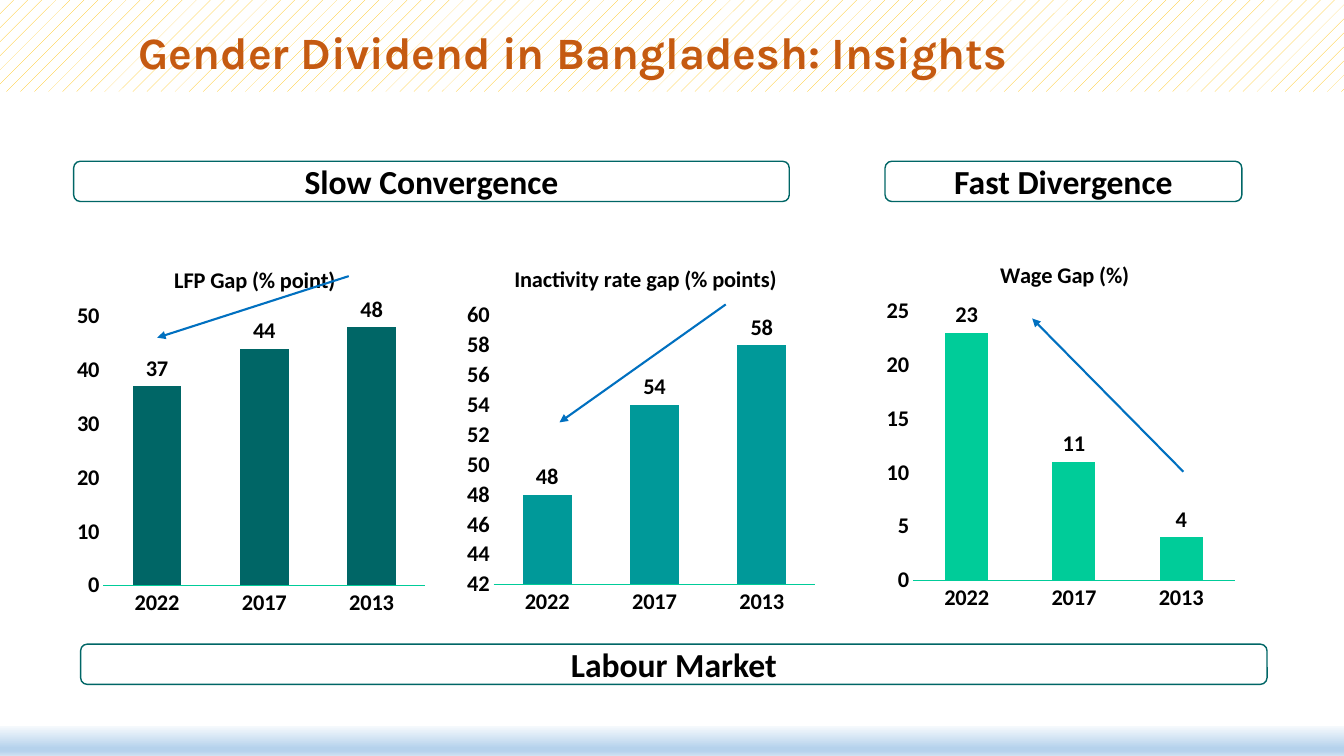
"""Build the slide on the gender dividend in Bangladesh with three gap charts."""
from pptx import Presentation
from pptx.chart.data import CategoryChartData
from pptx.dml.color import RGBColor
from pptx.enum.chart import XL_CHART_TYPE as ChartType, XL_LABEL_POSITION as LabelPosition
from pptx.enum.chart import XL_TICK_MARK as TickMark
from pptx.enum.dml import MSO_PATTERN_TYPE as Pattern
from pptx.enum.shapes import MSO_CONNECTOR as Connector, MSO_SHAPE as Shape
from pptx.enum.text import MSO_ANCHOR as Anchor, PP_ALIGN as Align
from pptx.oxml import parse_xml
from pptx.oxml.ns import nsdecls
from pptx.util import Inches, Pt

deck = Presentation()
deck.slide_width, deck.slide_height = Inches(13.33), Inches(7.5)
page = deck.slides.add_slide(deck.slide_layouts[5])


def share(*percents):
    """Turn alternating percentages of slide width and height into lengths."""
    sides = (deck.slide_width, deck.slide_height)
    return [round(sides[i % 2] * value / 100) for i, value in enumerate(percents)]


def style(font, size, color, name="Calibri"):
    """Set a bold font."""
    font.size, font.name, font.bold = Pt(size), name, True
    font.color.rgb = RGBColor.from_string(color)


top_band = page.shapes.add_shape(Shape.RECTANGLE, *share(0, 0, 100, 12.13))
top_band.fill.patterned()
top_band.fill.pattern = Pattern.PERCENT_5
top_band.fill.fore_color.rgb = RGBColor.from_string("FFC000")
top_band.fill.back_color.rgb = RGBColor.from_string("FFFFFF")

bottom_band = page.shapes.add_shape(Shape.RECTANGLE, *share(0, 96, 100, 4))
bottom_band.fill.gradient()
bottom_band.fill.gradient_angle = 270
stops = bottom_band.element.spPr.find(".//{*}gsLst")
for stop in list(stops):
    stops.remove(stop)
for percent, color in ((0, "F7FAFD"), (74, "B5D2EC"), (83, "B5D2EC"), (100, "CEE1F2")):
    stops.append(parse_xml(
        f'<a:gs {nsdecls("a")} pos="{percent * 1000}"><a:srgbClr val="{color}"/></a:gs>'))
for band in (top_band, bottom_band):
    band.line.fill.background()
    band.shadow.inherit = False

title = page.shapes.title
bottom_band.element.addnext(title.element)
title.left, title.top, title.width, title.height = share(0.98, 1.07, 83.35, 12.4)
title.text_frame.vertical_anchor = Anchor.MIDDLE
para = title.text_frame.paragraphs[0]
para.alignment, para.line_spacing = Align.CENTER, 0.9
span = para.add_run()
span.text = "Gender Dividend in Bangladesh: Insights"
style(span.font, 32, "C55A11", "Karla")

gaps = [
    ("LFP Gap (% point)", (37, 44, 48), "006666", 119, 5.18, 32, 0.277, (0, 50, 10)),
    ("Wage Gap (%)", (23, 11, 4), "00CC99", 149, 65.42, 31.33, 0.322, (0, 25, 5)),
    ("Inactivity rate gap (% points)", (48, 54, 58), "009999", 119, 34.21, 31.87, 0.139,
     (42, 60, 2)),
]
for name, values, color, gap_width, left, top, title_left, (low, high, step) in gaps:
    data = CategoryChartData(number_format="0")
    data.categories = ["2022", "2017", "2013"]
    data.add_series(name, values)
    chart = page.shapes.add_chart(
        ChartType.COLUMN_CLUSTERED, *share(left, top, 27, 50.67), data).chart
    chart.has_legend = False
    style(chart.font, 16, "000000")
    chart.has_title = True
    span = chart.chart_title.text_frame.paragraphs[0].add_run()
    span.text = name
    style(span.font, 16, "000000")
    chart.chart_title.include_in_layout = False

    years, scale = chart.category_axis, chart.value_axis
    scale.minimum_scale, scale.maximum_scale, scale.major_unit = low, high, step
    scale.has_major_gridlines = False
    scale.tick_labels.number_format = "0"
    scale.tick_labels.number_format_is_linked = False
    for axis in (years, scale):
        axis.major_tick_mark = axis.minor_tick_mark = TickMark.NONE
        style(axis.tick_labels.font, 16, "000000")
    scale.format.line.fill.background()
    years.format.line.color.rgb = RGBColor.from_string("00CC99")
    years.format.line.width = Pt(0.75)

    plot = chart.plots[0]
    plot.gap_width, plot.overlap, plot.vary_by_categories = gap_width, -27, False
    bars = plot.series[0]
    bars.format.fill.solid()
    bars.format.fill.fore_color.rgb = RGBColor.from_string(color)
    labels = bars.data_labels
    labels.show_value = True
    labels.position = LabelPosition.OUTSIDE_END
    labels.number_format, labels.number_format_is_linked = "0", False
    style(labels.font, 16, "000000")

    layouts = [
        ("title", 1, '<c:xMode val="edge"/><c:yMode val="edge"/>'
                     f'<c:x val="{title_left}"/><c:y val="0.05"/>'),
        ("plotArea", 0, '<c:layoutTarget val="inner"/><c:xMode val="edge"/>'
                        '<c:yMode val="edge"/><c:x val="0.093"/><c:y val="0.195"/>'
                        '<c:w val="0.887"/><c:h val="0.702"/>'),
    ]
    for part, index, rules in layouts:
        owner = chart.element.find(".//{*}chart/{*}" + part)
        for old in owner.findall("{*}layout"):
            owner.remove(old)
        owner.insert(index, parse_xml(
            f'<c:layout {nsdecls("c")}><c:manualLayout>{rules}</c:manualLayout></c:layout>'))

headings = [
    ("Slow Convergence", (5.48, 21.33, 53.25, 5.33)),
    ("Fast Divergence", (65.85, 21.33, 26.55, 5.33)),
    ("Labour Market", (6, 85.2, 88.28, 5.33)),
]
for text, area in headings:
    box = page.shapes.add_shape(Shape.ROUNDED_RECTANGLE, *share(*area))
    box.shadow.inherit = False
    box.fill.background()
    box.line.color.rgb = RGBColor.from_string("006666")
    box.line.width = Pt(1)
    box.text_frame.vertical_anchor = Anchor.MIDDLE
    para = box.text_frame.paragraphs[0]
    para.alignment = Align.CENTER
    span = para.add_run()
    span.text = text
    style(span.font, 24, "000000")

trends = [(25.95, 36.53, 11.7, 44.67), (54, 40.27, 41.63, 55.87), (88.05, 62.4, 76.8, 42.13)]
for ends in trends:
    arrow = page.shapes.add_connector(Connector.STRAIGHT, *share(*ends))
    arrow.line.color.rgb = RGBColor.from_string("0070C0")
    arrow.line.width = Pt(1.5)
    arrow.line._get_or_add_ln().append(
        parse_xml(f'<a:tailEnd {nsdecls("a")} type="triangle"/>'))
    arrow.element.spPr.append(parse_xml(f'<a:effectLst {nsdecls("a")}/>'))

deck.save("out.pptx")
